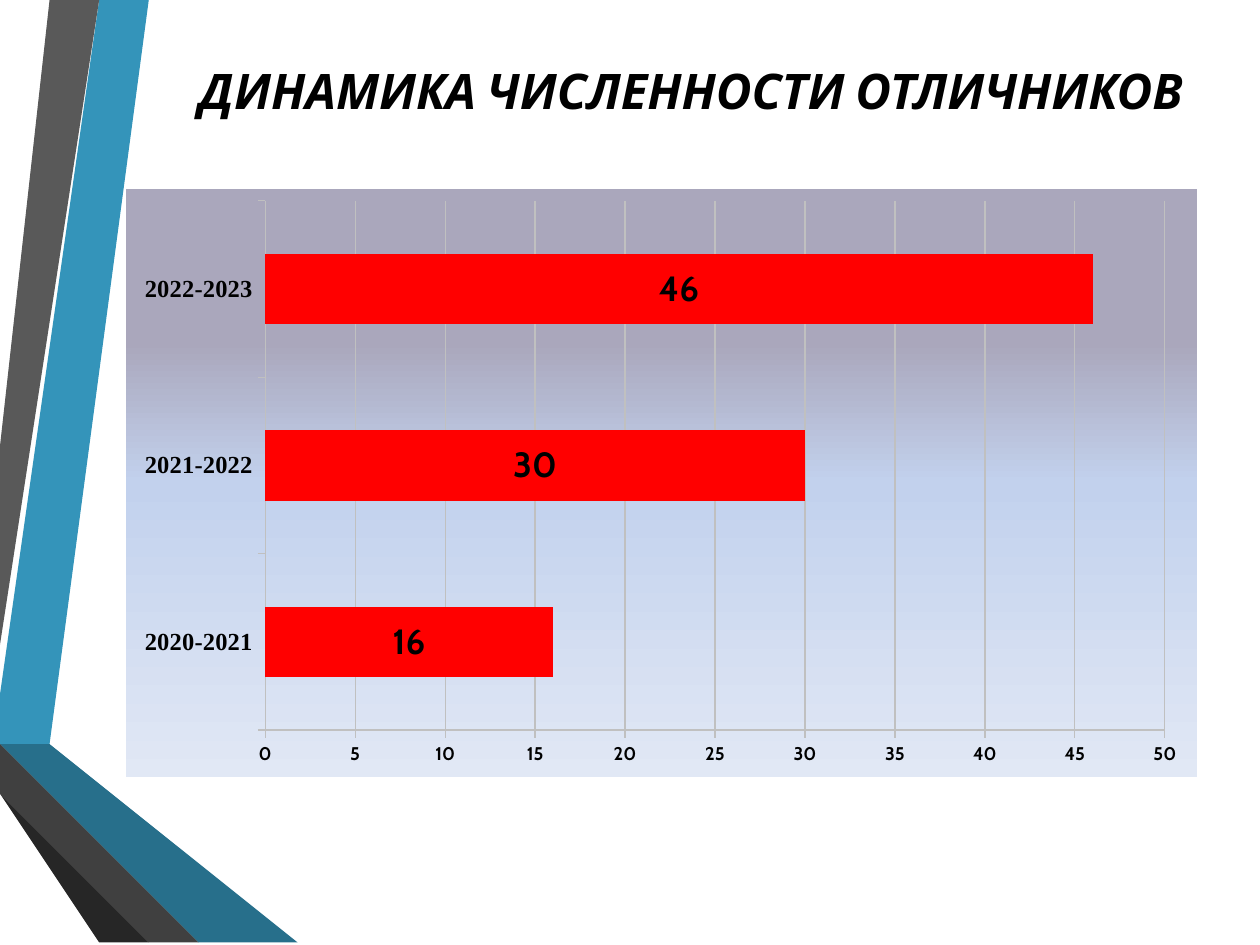
from dataclasses import dataclass

from lxml import etree
from pptx import Presentation
from pptx.chart.data import CategoryChartData
from pptx.dml.color import RGBColor
from pptx.enum.chart import XL_CHART_TYPE as ChartType
from pptx.enum.chart import XL_LABEL_POSITION as LabelPosition
from pptx.enum.chart import XL_TICK_MARK as TickMark
from pptx.enum.text import MSO_ANCHOR as Anchor
from pptx.enum.text import PP_ALIGN as Align
from pptx.oxml import parse_xml
from pptx.oxml.ns import nsdecls, qn
from pptx.util import Cm, Pt


@dataclass(frozen=True)
class Theme:
    font: str = "Cabin"
    year_font: str = "Times New Roman"
    ink: str = "000000"
    bar: str = "FF0000"
    grid: str = "C0C0C0"
    backdrop: tuple = ((26, "AAA7BC"), (50, "C2D1ED"), (100, "E1E8F5"))
    title_size: float = 28
    base_size: float = 10
    year_size: float = 14
    scale_size: float = 10.5
    value_size: float = 20


THEME = Theme()

# Colour and corners in centimetres, from back to front.
RIBBONS = (
    ("3494BA", ((0, 13.82), (0, 14.6), (0.56, 14.71), (2.97, 0), (2.26, 0))),
    ("595959", ((2.11, 0), (1.4, 0), (0, 8.53), (0, 12.85))),
    ("262626", ((0, 15.72), (0, 15.77), (2.36, 19.05), (2.51, 19.05))),
    ("1A4A5D", ((0, 14.71), (0, 14.73), (3.96, 19.05), (4.14, 19.05))),
    ("276F8B", ((0, 14.71), (4.14, 19.05), (5.92, 19.05), (0.56, 14.71), (0, 14.6))),
    ("404040", ((0, 15.72), (2.51, 19.05), (3.84, 19.05), (0, 14.88))),
)
HONOURS_BY_YEAR = {"2020-2021": 16, "2021-2022": 30, "2022-2023": 46}


def style_font(font, size, name=THEME.font, bold=True):
    font.name, font.size, font.bold = name, Pt(size), bold
    font.color.rgb = RGBColor.from_string(THEME.ink)


def add_ribbons(slide, left, top):
    for color, (start, *corners) in RIBBONS:
        outline = slide.shapes.build_freeform(*start, scale=Cm(1))
        outline.add_line_segments(corners, close=True)
        ribbon = outline.convert_to_shape(left, top)
        ribbon.fill.solid()
        ribbon.fill.fore_color.rgb = RGBColor.from_string(color)
        ribbon.line.fill.background()
        ribbon.shadow.inherit = False


def add_title(slide, left, top, width, height, wording):
    frame = slide.shapes.add_textbox(left, top, width, height).text_frame
    frame.word_wrap = True
    frame.vertical_anchor = Anchor.MIDDLE
    heading = frame.paragraphs[0]
    heading.alignment = Align.CENTER
    run = heading.add_run()
    run.text = wording
    style_font(run.font, THEME.title_size)
    run.font.italic = True


def set_backdrop(chart):
    """Fill the chart area with the theme's vertical gradient."""
    stops = "".join(
        f'<a:gs pos="{position * 1000}"><a:srgbClr val="{color}"/></a:gs>'
        for position, color in THEME.backdrop
    )
    chart.element.find(qn("c:chart")).addnext(parse_xml(
        f'<c:spPr {nsdecls("c", "a")}><a:gradFill><a:gsLst>{stops}</a:gsLst>'
        '<a:lin ang="5400000" scaled="0"/></a:gradFill><a:ln><a:noFill/></a:ln></c:spPr>'
    ))


def place_plot(chart, x, y, w, h):
    """Fix the inner plot area, in fractions of the chart area."""
    plot_area = chart.element.find(qn("c:chart")).find(qn("c:plotArea"))
    for old_layout in plot_area.findall(qn("c:layout")):
        plot_area.remove(old_layout)
    layout = etree.Element(qn("c:layout"))
    manual = etree.SubElement(layout, qn("c:manualLayout"))
    settings = dict(layoutTarget="inner", xMode="edge", yMode="edge", x=x, y=y, w=w, h=h)
    for tag, value in settings.items():
        etree.SubElement(manual, qn(f"c:{tag}")).set("val", str(value))
    plot_area.insert(0, layout)


def style_axis(axis, size, font_name):
    style_font(axis.tick_labels.font, size, font_name)
    axis.major_tick_mark = TickMark.OUTSIDE
    axis.minor_tick_mark = TickMark.NONE
    axis.format.line.color.rgb = RGBColor.from_string(THEME.grid)


def add_honours_chart(slide, left, top, width, height):
    honours = CategoryChartData()
    honours.categories = list(HONOURS_BY_YEAR)
    honours.add_series("Series 1", list(HONOURS_BY_YEAR.values()))
    chart = slide.shapes.add_chart(
        ChartType.BAR_STACKED, left, top, width, height, honours
    ).chart
    chart.has_title = chart.has_legend = False
    style_font(chart.font, THEME.base_size, bold=False)
    set_backdrop(chart)
    place_plot(chart, 0.13, 0.02, 0.84, 0.9)

    style_axis(chart.category_axis, THEME.year_size, THEME.year_font)
    scale = chart.value_axis
    style_axis(scale, THEME.scale_size, THEME.font)
    scale.minimum_scale, scale.maximum_scale, scale.major_unit = 0, 50, 5
    scale.has_major_gridlines = True
    scale.major_gridlines.format.line.color.rgb = RGBColor.from_string(THEME.grid)

    bars = chart.plots[0]
    bars.gap_width, bars.overlap = 150, 100
    bars.vary_by_categories = False
    series = bars.series[0]
    series.format.fill.solid()
    series.format.fill.fore_color.rgb = RGBColor.from_string(THEME.bar)
    labels = series.data_labels
    labels.show_value = True
    labels.position = LabelPosition.CENTER
    style_font(labels.font, THEME.value_size)


def main():
    deck = Presentation()
    deck.slide_width, deck.slide_height = Cm(25.4), Cm(19.05)
    slide = deck.slides.add_slide(deck.slide_layouts[6])
    add_ribbons(slide, Cm(0), Cm(0))
    add_title(slide, Cm(2.9), Cm(1.07), Cm(22.05), Cm(1.47),
              "ДИНАМИКА ЧИСЛЕННОСТИ ОТЛИЧНИКОВ")
    add_honours_chart(slide, Cm(2.54), Cm(3.81), Cm(21.59), Cm(11.86))
    deck.save("out.pptx")


if __name__ == "__main__":
    main()
